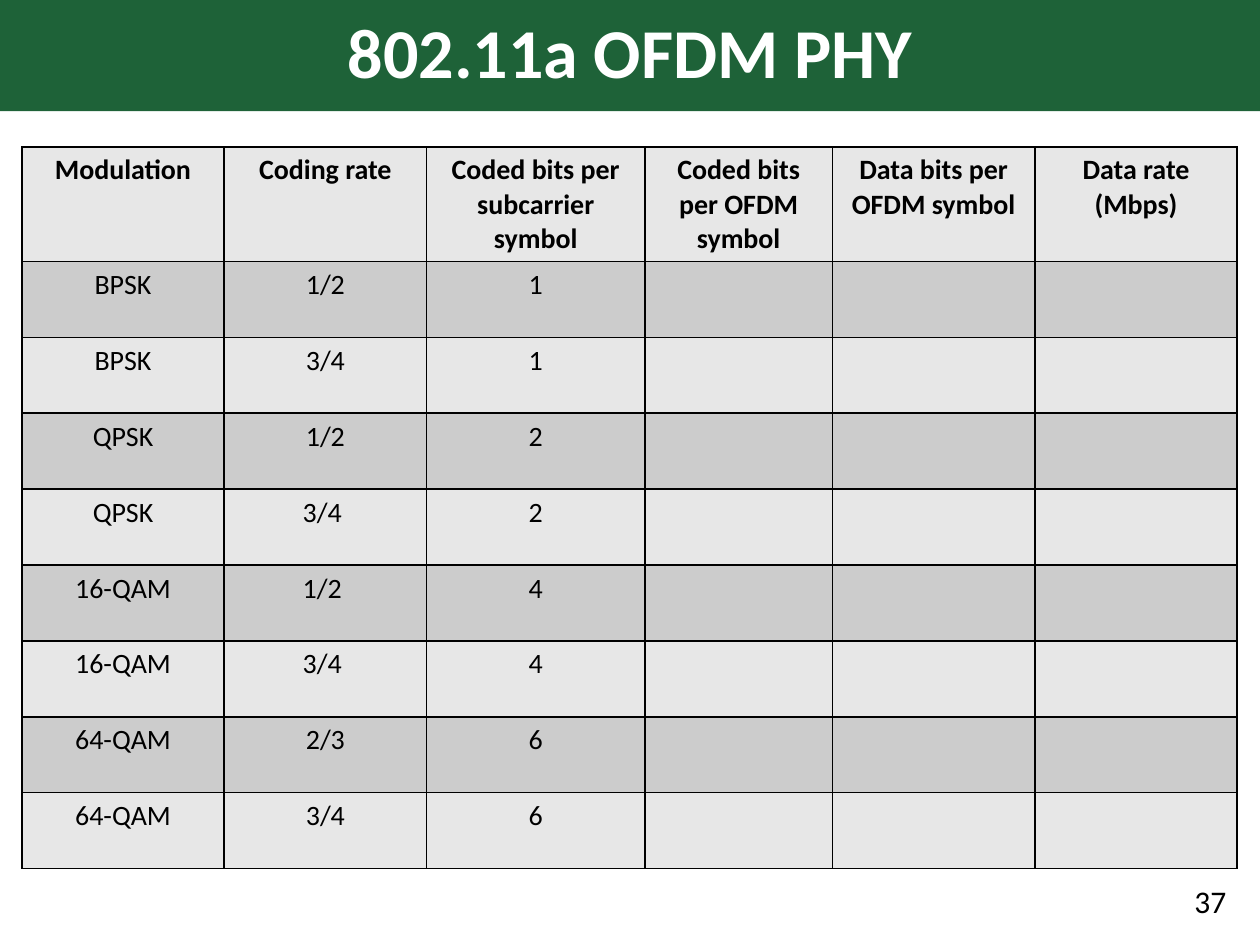
from dataclasses import dataclass

import pptx
import pptx.dml.color
import pptx.enum.shapes
import pptx.enum.text
import pptx.oxml
import pptx.oxml.ns
import pptx.util

Cm = pptx.util.Cm
ALIGN = pptx.enum.text.PP_ALIGN
MIDDLE = pptx.enum.text.MSO_ANCHOR.MIDDLE


@dataclass(frozen=True)
class Theme:
    font: str = "Calibri"
    banner: str = "1E6238"
    banner_text: str = "FFFFFF"
    text: str = "000000"
    light_row: str = "E7E7E7"
    dark_row: str = "CCCCCC"
    border: str = "000000"
    border_width: float = 1
    title_size: int = 40
    number_size: int = 18
    table_size: int = 16


HEADINGS = (
    "Modulation",
    "Coding rate",
    "Coded bits per subcarrier symbol",
    "Coded bits per OFDM symbol",
    "Data bits per OFDM symbol",
    "Data rate (Mbps)",
)
MODES = (
    ("BPSK", "1/2", "1"),
    ("BPSK", "3/4", "1"),
    ("QPSK", "1/2", "2"),
    ("QPSK", "3/4 ", "2"),
    ("16-QAM", "1/2 ", "4"),
    ("16-QAM", "3/4 ", "4"),
    ("64-QAM", "2/3", "6"),
    ("64-QAM", "3/4", "6"),
)
COLUMN_WIDTHS = (4.08, 4.08, 4.4, 3.78, 4.08, 4.08)
HEADER_HEIGHT = 2.31
ROW_HEIGHT = 1.53


def rgb(value):
    return pptx.dml.color.RGBColor.from_string(value)


class PageBuilder:
    def __init__(self, page, theme):
        self.page = page
        self.theme = theme

    def set_text(self, para, text, size, color, align, bold=False):
        para.text = text
        para.alignment = align
        font = para.font
        font.name = self.theme.font
        font.size = pptx.util.Pt(size)
        font.bold = bold
        font.color.rgb = rgb(color)

    def banner(self, text, width, height):
        box = self.page.shapes.add_shape(
            pptx.enum.shapes.MSO_SHAPE.RECTANGLE, 0, 0, width, height)
        box.shadow.inherit = False
        box.fill.solid()
        box.fill.fore_color.rgb = rgb(self.theme.banner)
        box.line.fill.background()
        box.text_frame.word_wrap = True
        box.text_frame.vertical_anchor = MIDDLE
        para = box.text_frame.paragraphs[0]
        para.line_spacing = 0.9
        self.set_text(para, text, self.theme.title_size,
                      self.theme.banner_text, ALIGN.CENTER, bold=True)

    def page_number(self, text, left, top, width, height):
        box = self.page.shapes.add_textbox(left, top, width, height)
        box.text_frame.word_wrap = True
        box.text_frame.vertical_anchor = MIDDLE
        self.set_text(box.text_frame.paragraphs[0], text,
                      self.theme.number_size, self.theme.text, ALIGN.RIGHT)

    def table(self, rows, left, top, widths, heights):
        """Draw a ruled table; rows shorter than the grid leave empty cells."""
        table = self.page.shapes.add_table(
            len(heights), len(widths), left, top, sum(widths), sum(heights)).table
        for column, width in zip(table.columns, widths):
            column.width = width
        for index, (row, height, texts) in enumerate(zip(table.rows, heights, rows)):
            row.height = height
            fill = self.theme.dark_row if index % 2 else self.theme.light_row
            for position, cell in enumerate(row.cells):
                text = texts[position] if position < len(texts) else ""
                self.set_text(cell.text_frame.paragraphs[0], text,
                              self.theme.table_size, self.theme.text,
                              ALIGN.CENTER, bold=index == 0)
                self.rule_cell(cell)
                cell.fill.solid()
                cell.fill.fore_color.rgb = rgb(fill)

    def rule_cell(self, cell):
        """Add a border on all four sides; call before filling the cell."""
        properties = cell._tc.get_or_add_tcPr()
        width = pptx.util.Pt(self.theme.border_width)
        for side in ("lnL", "lnR", "lnT", "lnB"):
            properties.append(pptx.oxml.parse_xml(
                f'<a:{side} {pptx.oxml.ns.nsdecls("a")} w="{width}"><a:solidFill>'
                f'<a:srgbClr val="{self.theme.border}"/></a:solidFill></a:{side}>'))


def main():
    deck = pptx.Presentation()
    deck.slide_width, deck.slide_height = Cm(25.4), Cm(19.05)
    page = deck.slides.add_slide(deck.slide_layouts[6])
    builder = PageBuilder(page, Theme())

    builder.banner("802.11a OFDM PHY", deck.slide_width, Cm(2.24))
    builder.page_number("37", Cm(19.25), Cm(17.65), Cm(5.72), Cm(1.02))
    builder.table(
        (HEADINGS, *MODES), Cm(0.44), Cm(2.96),
        [Cm(width) for width in COLUMN_WIDTHS],
        [Cm(HEADER_HEIGHT)] + [Cm(ROW_HEIGHT)] * len(MODES))
    deck.save("out.pptx")


if __name__ == "__main__":
    main()
